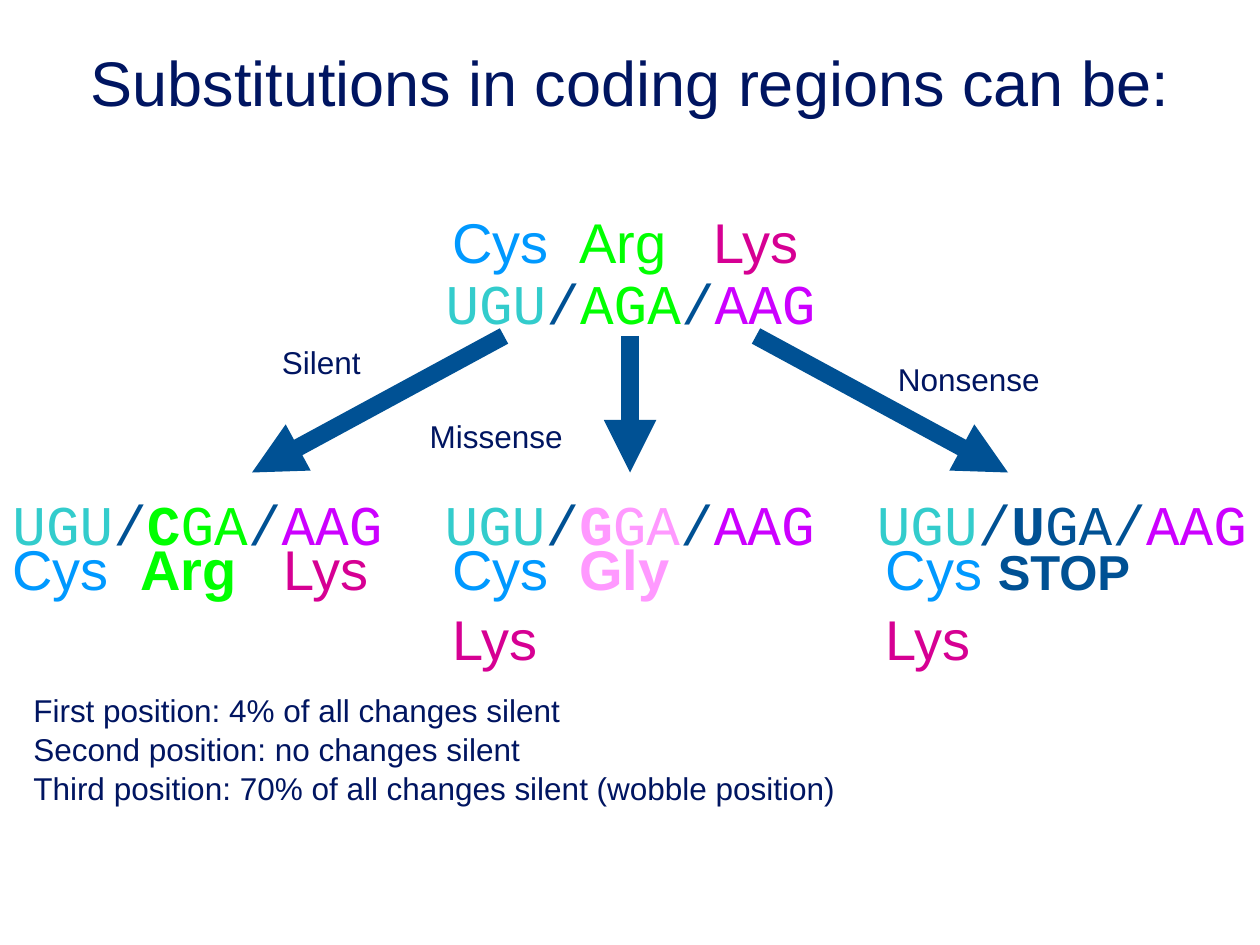
from lxml.etree import SubElement
from pptx import Presentation
from pptx.dml.color import RGBColor
from pptx.enum.shapes import MSO_CONNECTOR
from pptx.enum.text import PP_ALIGN
from pptx.oxml.ns import qn
from pptx.util import Pt

NAVY, BLUE, SKY, TEAL = "001561", "005194", "0099FF", "33CCCC"
GREEN, PINK, PURPLE, MAGENTA = "00FF00", "FF99FF", "CC00FF", "D60093"

TITLE = "Substitutions in coding regions can be:"
NOTES = ["First position: 4% of all changes silent",
         "Second position: no changes silent",
         "Third position: 70% of all changes silent (wobble position)"]

# Runs are (text, colour, bold, size); bold and size are optional
UGU, SLASH, AAG = ("UGU", TEAL), ("/", BLUE), ("AAG", PURPLE)
CYS, LYS = ("Cys", SKY), ("Lys", MAGENTA)
TAB = ("\t", SKY)

# Left, top, runs of each codon row
CODONS = {
    "Original": (247.5, 144, [UGU, SLASH, ("AGA", GREEN), SLASH, AAG]),
    "Silent": (0, 270, [UGU, SLASH, ("C", GREEN, True), ("GA", GREEN), SLASH, AAG]),
    "Missense": (247, 270, [UGU, SLASH, ("G", PINK, True), ("GA", PINK), SLASH, AAG]),
    "Nonsense": (494, 270, [UGU, SLASH, ("U", BLUE, True), ("GA/", BLUE), AAG]),
}
# Left, top, width, lines of runs, tab stops of each amino acid row
AMINO_ACIDS = [
    (251.5, 111, 220, [[CYS, TAB, ("Arg", GREEN), TAB, LYS]], (72.5, 149)),
    (0, 298, 220, [[CYS, TAB, ("Arg", GREEN, True), TAB, LYS]], (73, 155)),
    (251.5, 298, 212, [[CYS, TAB, ("Gly", PINK, True)], [LYS]], (72.5,)),
    (499, 298, 211, [[("Cys ", SKY), ("STOP", BLUE, True, 28)], [LYS]], ()),
]
# Label, left, top, width, arrow start x, arrow end x
CHANGES = [
    ("Silent", 154, 191, 81, 288, 144),
    ("Missense", 238.5, 233.5, 117, 360, 360),
    ("Nonsense", 506, 201, 121, 432, 576),
]
ARROW_TOP, ARROW_BOTTOM = 192, 270


def rgb(value):
    return RGBColor.from_string(value)


def add_text(lines, left, top, width, height, size=18, font="Arial", color=NAVY,
             align=PP_ALIGN.LEFT, wrap=True, inset=4, tabs=()):
    """Add a text box; each line is a string or a list of runs."""
    box = s.shapes.add_textbox(Pt(left), Pt(top), Pt(width), Pt(height))
    tf = box.text_frame
    tf.word_wrap = wrap
    tf.margin_top = Pt(inset)
    for i, line in enumerate(lines):
        p = tf.paragraphs[0] if i == 0 else tf.add_paragraph()
        p.alignment = align
        p.line_spacing = 1.04
        if tabs:
            stops = SubElement(p._p.get_or_add_pPr(), qn("a:tabLst"))
            for stop in tabs:
                SubElement(stops, qn("a:tab"), pos=str(Pt(stop)), algn="l")
        runs = [(line, color)] if isinstance(line, str) else line
        for text, run_color, *extra in runs:
            bold, run_size = (extra + [False, size][len(extra):])
            r = p.add_run()
            r.text = text
            r.font.name, r.font.size, r.font.bold = font, Pt(run_size), bold
            r.font.color.rgb = rgb(run_color)
    return box


def add_arrow(x1, x2):
    line = s.shapes.add_connector(MSO_CONNECTOR.STRAIGHT, Pt(x1), Pt(ARROW_TOP),
                                  Pt(x2), Pt(ARROW_BOTTOM))
    line.line.color.rgb = rgb(BLUE)
    line.line.width = Pt(10)
    SubElement(line.line._get_or_add_ln(), qn("a:tailEnd"), type="triangle")
    SubElement(line._element.spPr, qn("a:effectLst"))
    return line


prs = Presentation()
prs.slide_width, prs.slide_height = Pt(720), Pt(540)
s = prs.slides.add_slide(prs.slide_layouts[6])

# Title
add_text([TITLE], 0, 18, 720, 57.5, size=36, align=PP_ALIGN.CENTER, inset=5)

# Codon rows
codon_boxes = {name: add_text([runs], left, top, 226, 45.5, size=32,
                              font="Courier New", wrap=False, inset=8)
               for name, (left, top, runs) in CODONS.items()}

# Arrows and their labels
for name, left, top, width, x1, x2 in CHANGES:
    arrow = add_arrow(x1, x2)
    if x1 == x2:
        arrow.end_connect(codon_boxes[name], 0)
    add_text([name], left, top, width, 41, wrap=False)

# Amino acid rows
for left, top, width, lines, tabs in AMINO_ACIDS:
    add_text(lines, left, top, width, 52, size=32, inset=6, tabs=tabs)

# Share of silent changes by codon position
add_text(NOTES, 12, 390, 684, 108)

prs.save("out.pptx")
